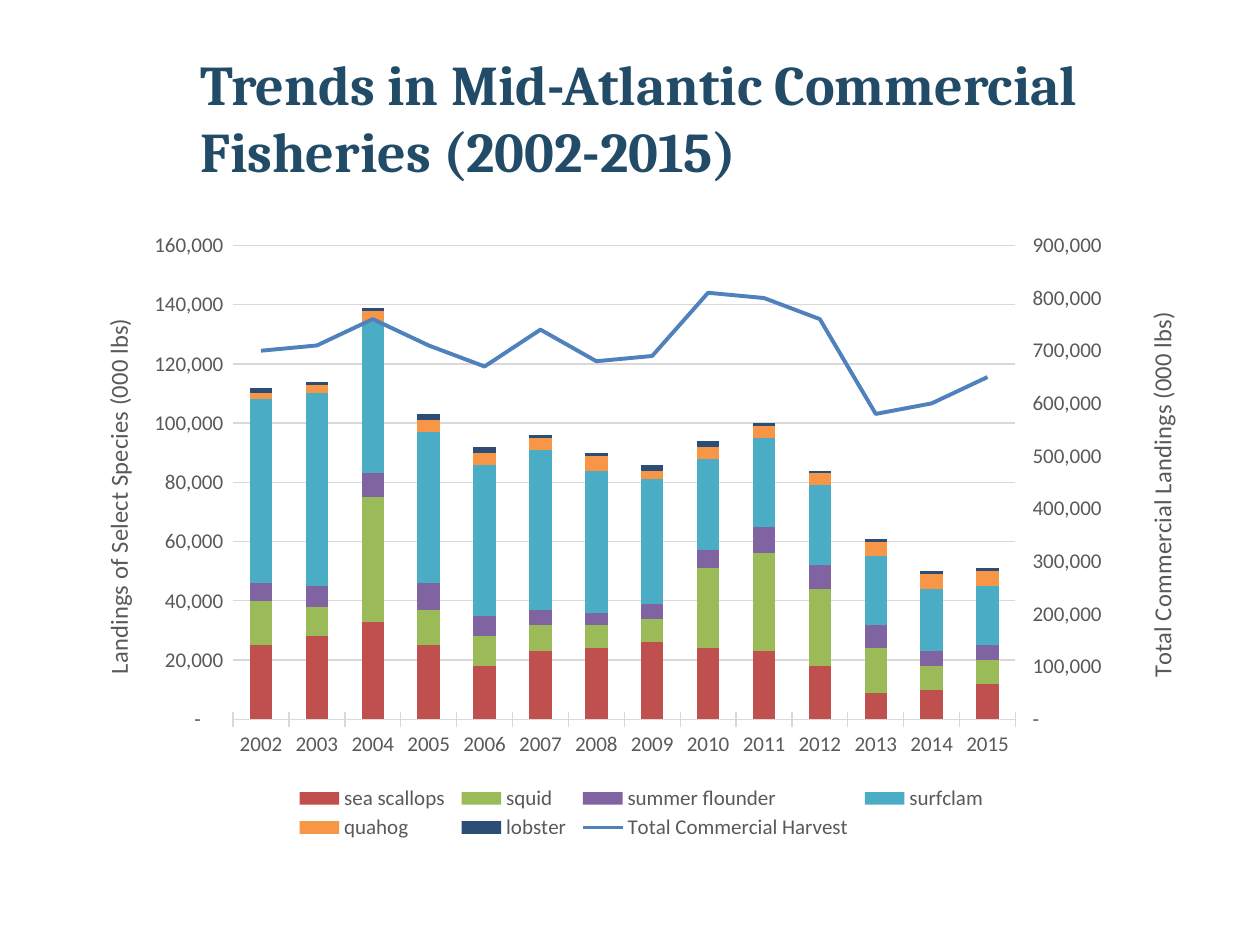
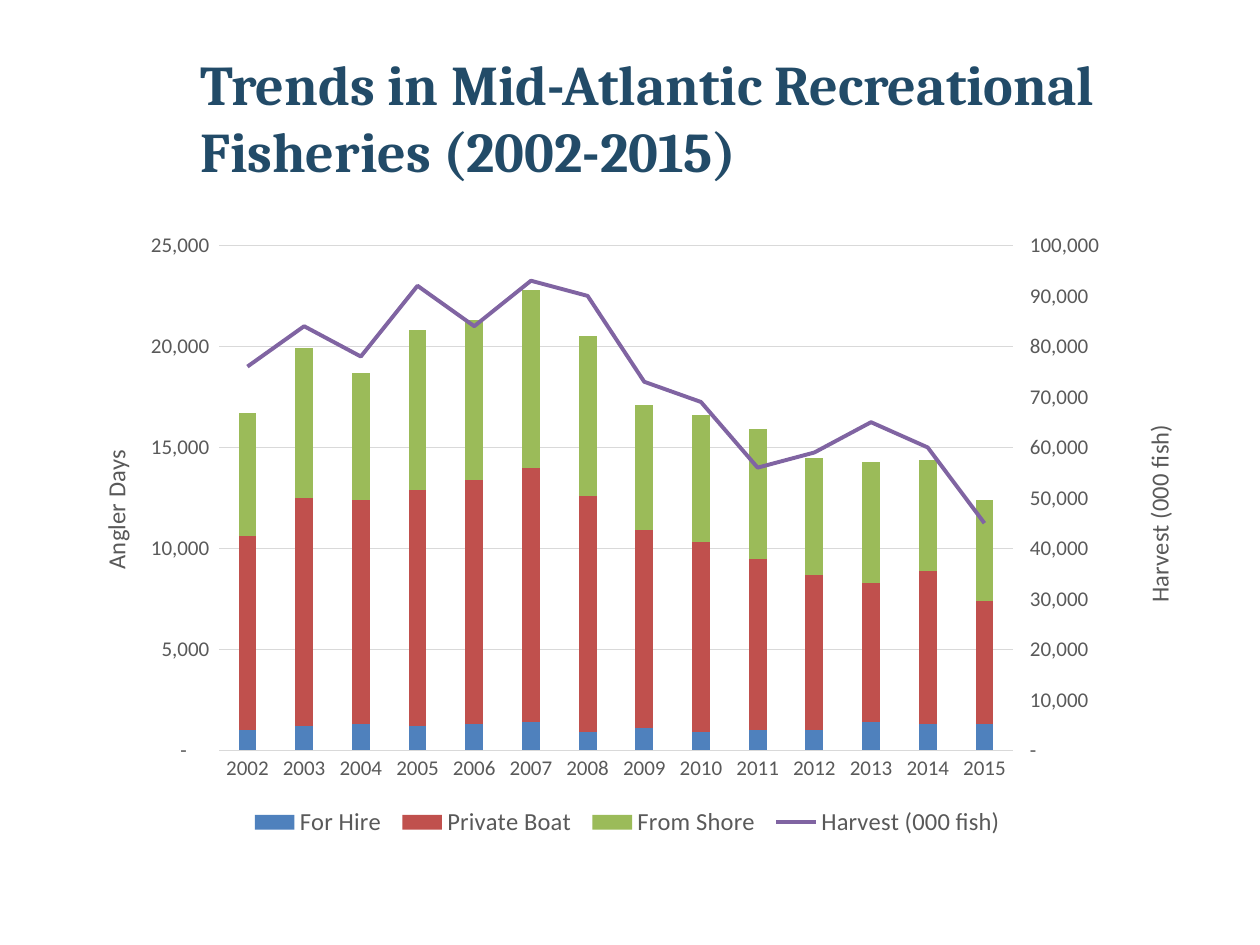
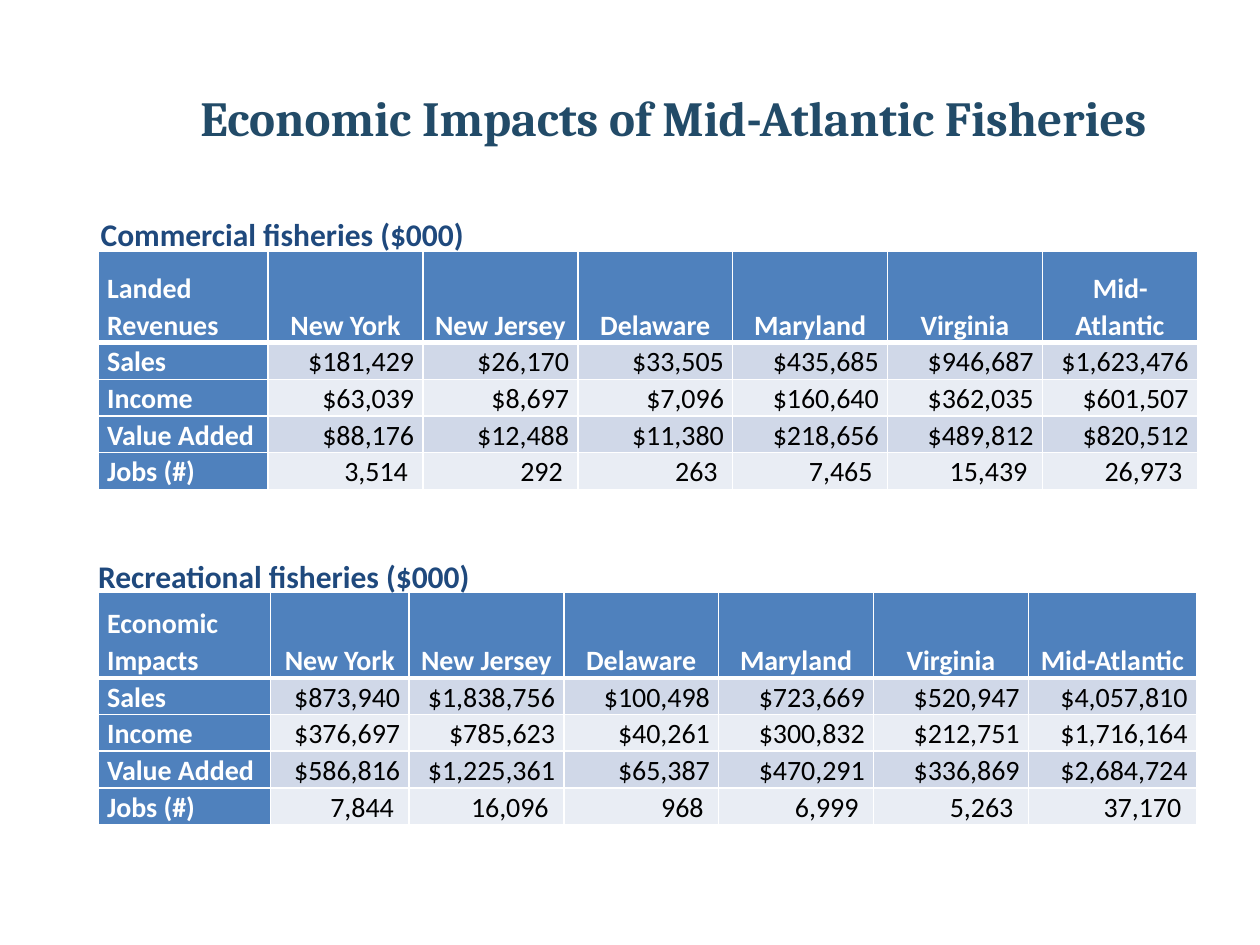
"""Build three slides on Mid-Atlantic commercial and recreational fisheries."""
import copy

import lxml.etree
import pptx
import pptx.chart.axis
import pptx.chart.data
import pptx.dml.color
import pptx.enum.chart
import pptx.enum.text
import pptx.oxml
import pptx.oxml.ns
import pptx.util

Pt = pptx.util.Pt
qn = pptx.oxml.ns.qn
ALIGN = pptx.enum.text.PP_ALIGN
ANCHOR = pptx.enum.text.MSO_ANCHOR
TICK = pptx.enum.chart.XL_TICK_MARK

COLORS = {
    "title": "224B68", "caption": "1F497D", "white": "FFFFFF", "black": "000000",
    "axis": "595959", "grid": "D9D9D9", "band": "D0D8E8", "pale": "E9EDF4",
    "blue": "4F81BD", "red": "C0504D", "green": "9BBB59", "purple": "8064A2",
    "aqua": "4BACC6", "orange": "F79646", "navy": "2C4D75",
}
HEAD_FONT, BODY_FONT = "Cambria", "Calibri"
NUMBER_FORMAT = '_(* #,##0_);_(* \\(#,##0\\);_(* "-"??_);_(@_)'
YEARS = [str(year) for year in range(2002, 2016)]
STATES = ["New York", "New Jersey", "Delaware", "Maryland", "Virginia", "Mid-Atlantic"]

COMMERCIAL = {
    "bars": [
        ("sea scallops", "red", [25, 28, 33, 25, 18, 23, 24, 26, 24, 23, 18, 9, 10, 12]),
        ("squid", "green", [15, 10, 42, 12, 10, 9, 8, 8, 27, 33, 26, 15, 8, 8]),
        ("summer flounder", "purple", [6, 7, 8, 9, 7, 5, 4, 5, 6, 9, 8, 8, 5, 5]),
        ("surfclam", "aqua", [62, 65, 51, 51, 51, 54, 48, 42, 31, 30, 27, 23, 21, 20]),
        ("quahog", "orange", [2, 3, 4, 4, 4, 4, 5, 3, 4, 4, 4, 5, 5, 5]),
        ("lobster", "navy", [2, 1, 1, 2, 2, 1, 1, 2, 2, 1, 1, 1, 1, 1]),
    ],
    "line": ("Total Commercial Harvest", "blue",
             [700, 710, 760, 710, 670, 740, 680, 690, 810, 800, 760, 580, 600, 650]),
    "left": ("Landings of Select Species (000 lbs)", 160000, 20000, (0.03, 0.15)),
    "right": ("Total Commercial Landings (000 lbs)", 900000, 100000, (0.95, 0.14)),
    "x": 36, "gap": 150, "tick": TICK.CROSS, "legend_size": 12,
    "plot": (0.15, 0.04, 0.69, 0.76), "legend": (0.2, 0.9, 0.62, 0.1),
}
RECREATIONAL = {
    "bars": [
        ("For Hire", "blue",
         [1, 1.2, 1.3, 1.2, 1.3, 1.4, 0.9, 1.1, 0.9, 1, 1, 1.4, 1.3, 1.3]),
        ("Private Boat", "red",
         [9.6, 11.3, 11.1, 11.7, 12.1, 12.6, 11.7, 9.8, 9.4, 8.5, 7.7, 6.9, 7.6, 6.1]),
        ("From Shore", "green",
         [6.1, 7.4, 6.3, 7.9, 7.9, 8.8, 7.9, 6.2, 6.3, 6.4, 5.8, 6, 5.5, 5]),
    ],
    "line": ("Harvest (000 fish)", "purple",
             [76, 84, 78, 92, 84, 93, 90, 73, 69, 56, 59, 65, 60, 45]),
    "left": ("Angler Days", 25000, 5000, (0.03, 0.36)),
    "right": ("Harvest (000 fish)", 100000, 10000, (0.95, 0.32)),
    "x": 34.5, "gap": 219, "tick": TICK.NONE, "legend_size": 14,
    "plot": (0.14, 0.04, 0.7, 0.81), "legend": (0.16, 0.93, 0.68, 0.07),
}

REVENUE_ROWS = [
    ["Landed Revenues"] + STATES,
    ["Sales", "$181,429", "$26,170", "$33,505", "$435,685", "$946,687", "$1,623,476"],
    ["Income", "$63,039", "$8,697", "$7,096", "$160,640", "$362,035", "$601,507"],
    ["Value Added", "$88,176", "$12,488", "$11,380", "$218,656", "$489,812", "$820,512"],
    ["Jobs (#)", "3,514 ", "292 ", "263 ", "7,465 ", "15,439 ", "26,973 "],
]
IMPACT_ROWS = [
    ["Economic Impacts"] + STATES,
    ["Sales", "$873,940", "$1,838,756", "$100,498", "$723,669", "$520,947", "$4,057,810"],
    ["Income", "$376,697", "$785,623", "$40,261", "$300,832", "$212,751", "$1,716,164"],
    ["Value Added", "$586,816", "$1,225,361", "$65,387", "$470,291", "$336,869", "$2,684,724"],
    ["Jobs (#)", "7,844 ", "16,096 ", "968 ", "6,999 ", "5,263 ", "37,170 "],
]


def rgb(name):
    return pptx.dml.color.RGBColor.from_string(COLORS[name])


def set_font(font, size, color, bold=False, name=BODY_FONT):
    font.size, font.bold, font.name = Pt(size), bold, name
    font.color.rgb = rgb(color)


def add_run(p, text, *style, **options):
    r = p.add_run()
    r.text = text
    set_font(r.font, *style, **options)


def add_slide(prs, title, size=32):
    s = prs.slides.add_slide(prs.slide_layouts[5])
    sp = s.shapes.title
    sp.left, sp.top, sp.width, sp.height = Pt(107.3), Pt(21.6), Pt(576.7), Pt(90)
    tf = sp.text_frame
    tf.word_wrap = True
    tf.auto_size = pptx.enum.text.MSO_AUTO_SIZE.NONE
    tf.vertical_anchor = ANCHOR.MIDDLE
    p = tf.paragraphs[0]
    p.alignment = ALIGN.LEFT
    add_run(p, title, size, "title", bold=True, name=HEAD_FONT)
    return s


def add_caption(s, text, x, y):
    tf = s.shapes.add_textbox(Pt(x), Pt(y), Pt(229), Pt(28.8)).text_frame
    tf.word_wrap = False
    add_run(tf.paragraphs[0], text, 18, "caption", bold=True)


def set_layout(parent, index, bounds, inner=False):
    old = parent.find(qn("c:layout"))
    if old is not None:
        parent.remove(old)
    layout = pptx.oxml.parse_xml(f"<c:layout {pptx.oxml.ns.nsdecls('c')}/>")
    manual = lxml.etree.SubElement(layout, qn("c:manualLayout"))
    settings = [("layoutTarget", "inner")] if inner else []
    settings += [("xMode", "edge"), ("yMode", "edge")]
    settings += zip("xywh", bounds)
    for tag, value in settings:
        lxml.etree.SubElement(manual, qn("c:" + tag)).set("val", str(value))
    parent.insert(index, layout)


def style_value_axis(element, title, maximum, step, place, tick):
    axis = pptx.chart.axis.ValueAxis(element)
    axis.minimum_scale, axis.maximum_scale, axis.major_unit = 0, maximum, step
    axis.major_tick_mark, axis.minor_tick_mark = tick, TICK.NONE
    axis.format.line.fill.background()
    set_font(axis.tick_labels.font, 12, "axis")
    axis.tick_labels.number_format = NUMBER_FORMAT
    axis.tick_labels.number_format_is_linked = False
    add_run(axis.axis_title.text_frame.paragraphs[0], title, 14, "axis")
    title_xml = element.find(qn("c:title"))
    body = title_xml.find(".//" + qn("a:bodyPr"))
    body.set("rot", "-5400000")
    body.set("vert", "horz")
    set_layout(title_xml, 1, place)
    return axis


def move_last_series_to_line(plot_area):
    """Plot the last series as a line on a second value axis and return that axis."""
    bars = plot_area.find(qn("c:barChart"))
    line = pptx.oxml.parse_xml(
        f"<c:lineChart {pptx.oxml.ns.nsdecls('c')}>"
        '<c:grouping val="standard"/><c:varyColors val="0"/><c:marker val="1"/>'
        '<c:axId val="111"/><c:axId val="222"/></c:lineChart>')
    ser = bars.findall(qn("c:ser"))[-1]
    invert = ser.find(qn("c:invertIfNegative"))
    if invert is not None:
        ser.remove(invert)
    line.insert(2, ser)
    bars.addnext(line)
    val = plot_area.find(qn("c:valAx"))
    val2, cat2 = copy.deepcopy(val), copy.deepcopy(plot_area.find(qn("c:catAx")))
    for axis, own, other in ((cat2, "111", "222"), (val2, "222", "111")):
        axis.find(qn("c:axId")).set("val", own)
        axis.find(qn("c:crossAx")).set("val", other)
    val.addnext(val2)
    val2.addnext(cat2)
    val2.find(qn("c:axPos")).set("val", "r")
    val2.find(qn("c:crosses")).set("val", "max")
    pptx.chart.axis.CategoryAxis(cat2).visible = False
    return val2


def add_combo_chart(s, spec_data):
    data = pptx.chart.data.CategoryChartData()
    data.categories = YEARS
    for name, _, thousands in spec_data["bars"] + [spec_data["line"]]:
        data.add_series(name, [round(v * 1000) for v in thousands])
    chart = s.shapes.add_chart(
        pptx.enum.chart.XL_CHART_TYPE.COLUMN_STACKED,
        Pt(spec_data["x"]), Pt(126), Pt(648), Pt(356.4), data).chart
    chart.has_title = False
    set_font(chart.font, 10, "black")
    plot_area = chart.plots[0]._element.getparent()
    right = move_last_series_to_line(plot_area)

    bars, line = chart.plots
    bars.gap_width, bars.overlap, bars.vary_by_categories = spec_data["gap"], 100, False
    for ser, (_, color, _) in zip(bars.series, spec_data["bars"]):
        ser.format.fill.solid()
        ser.format.fill.fore_color.rgb = rgb(color)
    ser = line.series[0]
    ser.smooth = False
    ser.marker.style = pptx.enum.chart.XL_MARKER_STYLE.NONE
    ser.format.line.width = Pt(2.25)
    ser.format.line.color.rgb = rgb(spec_data["line"][1])

    cat = chart.category_axis
    cat.major_tick_mark, cat.minor_tick_mark = spec_data["tick"], TICK.NONE
    set_font(cat.tick_labels.font, 12, "axis")
    left = style_value_axis(plot_area.find(qn("c:valAx")), *spec_data["left"], TICK.NONE)
    left.has_major_gridlines = True
    for fmt in (cat.format, left.major_gridlines.format):
        fmt.line.width = Pt(0.75)
        fmt.line.color.rgb = rgb("grid")
    style_value_axis(right, *spec_data["right"], TICK.OUTSIDE).has_major_gridlines = False

    chart.has_legend = True
    legend = chart.legend
    legend.position = pptx.enum.chart.XL_LEGEND_POSITION.BOTTOM
    legend.include_in_layout = False
    set_font(legend.font, spec_data["legend_size"], "axis")
    set_layout(legend._element, 1, spec_data["legend"])
    set_layout(plot_area, 0, spec_data["plot"], inner=True)


def set_borders(cell, top, bottom):
    tc_pr = cell._tc.get_or_add_tcPr()
    for side, width in (("L", 1), ("R", 1), ("T", top), ("B", bottom)):
        ln = lxml.etree.SubElement(tc_pr, qn("a:ln" + side), w=str(Pt(width)))
        fill = lxml.etree.SubElement(ln, qn("a:solidFill"))
        lxml.etree.SubElement(fill, qn("a:srgbClr"), val=COLORS["white"])


def fill_cell(cell, text, row, col):
    header = row == 0 or col == 0
    set_borders(cell, 3 if row == 1 else 1, 3 if row == 0 else 1)
    cell.fill.solid()
    cell.fill.fore_color.rgb = rgb("blue" if header else "band" if row % 2 else "pale")
    cell.margin_left = cell.margin_right = Pt(5)
    cell.margin_top = cell.margin_bottom = 0
    cell.vertical_anchor = ANCHOR.BOTTOM
    p = cell.text_frame.paragraphs[0]
    p.line_spacing = 1.07
    p.alignment = ALIGN.LEFT if col == 0 else ALIGN.CENTER if row == 0 else ALIGN.RIGHT
    add_run(p, text, 16, "white" if header else "black", bold=header)


def add_impact_table(s, y, rows, widths, heights):
    table = s.shapes.add_table(len(rows), len(widths), Pt(56.2), Pt(y),
                               Pt(sum(widths)), Pt(sum(heights))).table
    table.horz_banding = False
    for column, width in zip(table.columns, widths):
        column.width = Pt(width)
    for i, (values, height) in enumerate(zip(rows, heights)):
        table.rows[i].height = Pt(height)
        for j, text in enumerate(values):
            fill_cell(table.cell(i, j), text, i, j)


def main():
    prs = pptx.Presentation()
    prs.slide_width, prs.slide_height = Pt(720), Pt(540)
    for kind, data in (("Commercial", COMMERCIAL), ("Recreational", RECREATIONAL)):
        s = add_slide(prs, f"Trends in Mid-Atlantic {kind} Fisheries (2002-2015)")
        add_combo_chart(s, data)
    s = add_slide(prs, "Economic Impacts of Mid-Atlantic Fisheries", 28)
    add_impact_table(s, 143.3, REVENUE_ROWS, [97] + [88.5] * 6, [52.5] + [17.3] * 4)
    add_impact_table(s, 338.4, IMPACT_ROWS, [98.5, 79] + [88.5] * 4 + [96],
                     [49, 15.8, 15.8, 18, 18])
    add_caption(s, "Recreational fisheries ($000)", 49, 314.6)
    add_caption(s, "Commercial fisheries ($000)", 50.4, 119.5)
    prs.save("out.pptx")


if __name__ == "__main__":
    main()
